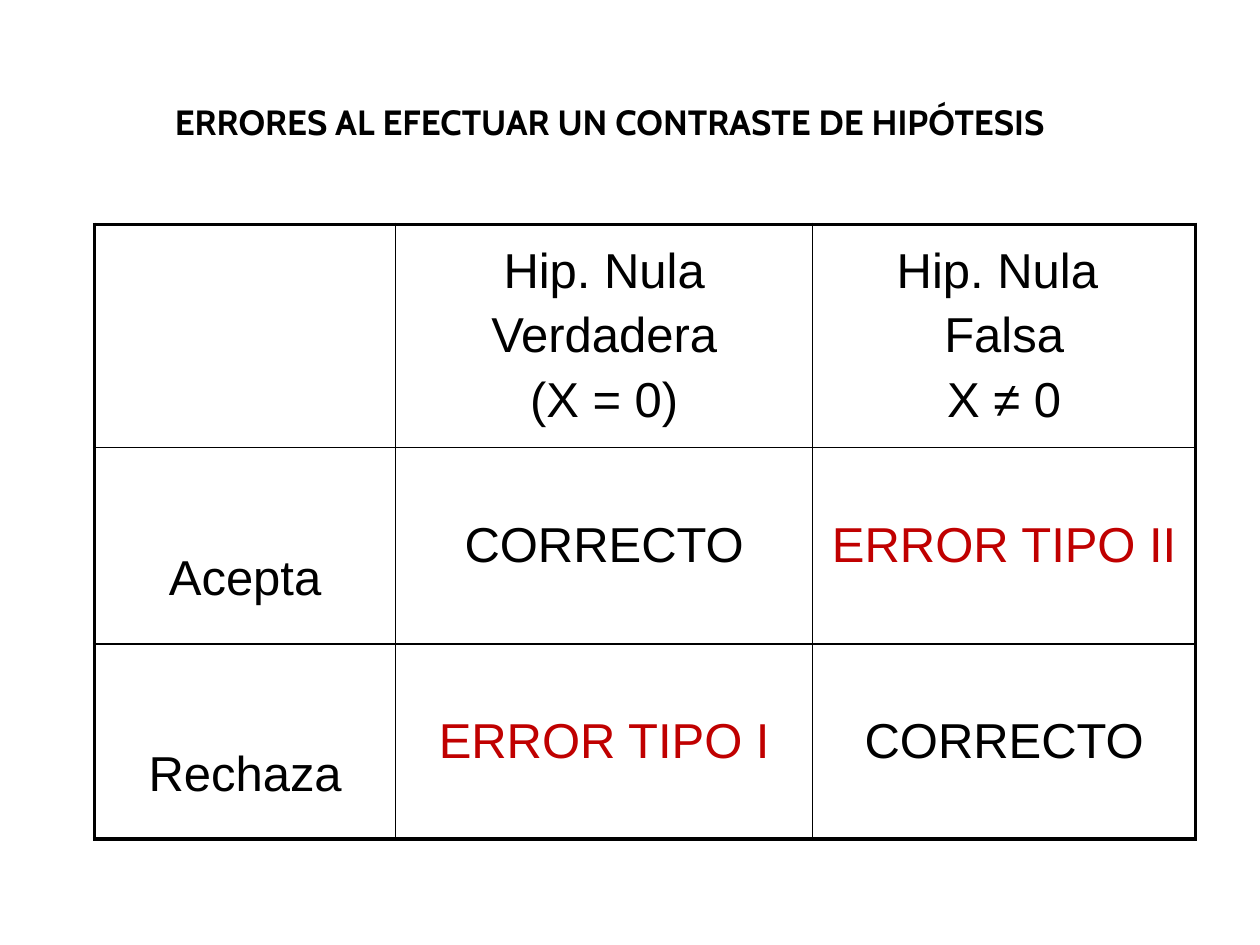
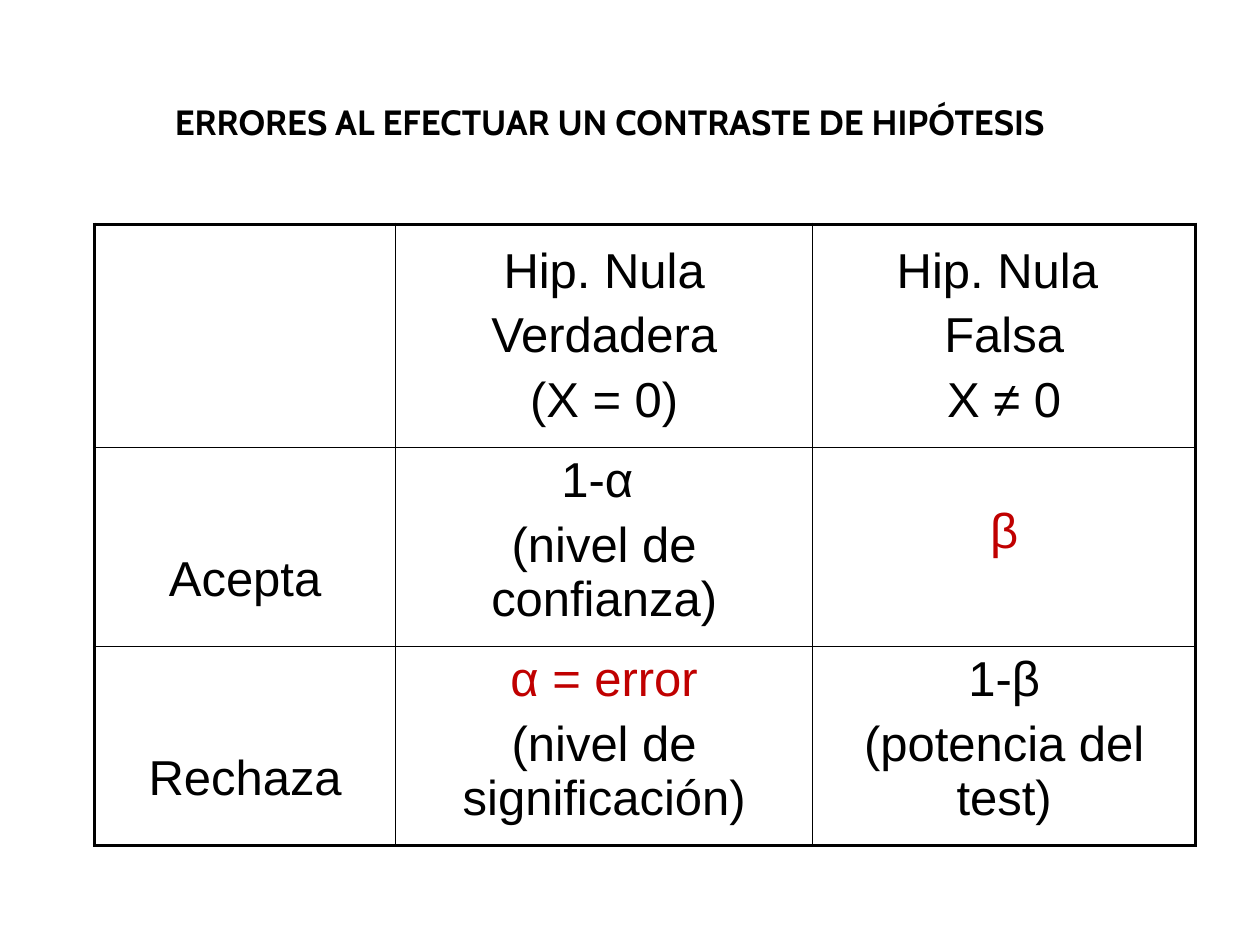
"""Build two slides on the errors made when testing a hypothesis."""
from lxml.etree import SubElement
from pptx import Presentation
from pptx.dml.color import RGBColor
from pptx.enum.text import MSO_ANCHOR, MSO_AUTO_SIZE, PP_ALIGN
from pptx.oxml.ns import qn
from pptx.util import Inches, Pt

BLACK, RED = "000000", "C00000"
THICK, THIN = 2.25, 1
TITLE = "ERRORES AL EFECTUAR UN CONTRASTE DE HIPÓTESIS"
COLUMN_WIDTHS = [2.39, 3.31, 3.04]
HEADINGS = [[], ["Hip. Nula", "Verdadera", "(X = 0)"], ["Hip. Nula ", "Falsa", "X ≠ 0"]]
RED_TEXTS = {"ERROR TIPO I", "ERROR TIPO II", "α = error", "β"}
TOP_MARGINS = {"Acepta": 0.57, "Rechaza": 0.57, "β": 0.45}

slides = [
    {
        "row_heights": [1.77, 1.56, 1.55],
        "anchor": MSO_ANCHOR.MIDDLE,
        "outcomes": [
            [["Acepta"], ["CORRECTO"], ["ERROR TIPO II"]],
            [["Rechaza"], ["ERROR TIPO I"], ["CORRECTO"]],
        ],
    },
    {
        "row_heights": [1.77, 1.58, 1.58],
        "anchor": MSO_ANCHOR.TOP,
        "outcomes": [
            [["Acepta"], ["1-α ", "(nivel de confianza)"], ["β"]],
            [["Rechaza"], ["α = error", "(nivel de significación)"],
             ["1-β", "(potencia del test)"]],
        ],
    },
]


def write(para, text, font="Arial", size=28, color=BLACK, bold=False, before=0):
    """Add centred, formatted text to a paragraph."""
    para.alignment = PP_ALIGN.CENTER
    para.space_before = Pt(before)
    span = para.add_run()
    span.text = text
    span.font.name = font
    span.font.size = Pt(size)
    span.font.bold = bold
    span.font.color.rgb = RGBColor.from_string(color)


def add_border(cell, side, width):
    """Draw one black side of a table cell."""
    properties = cell._tc.get_or_add_tcPr()
    line = SubElement(properties, qn(f"a:ln{side}"), w=str(Pt(width)))
    fill = SubElement(line, qn("a:solidFill"))
    SubElement(fill, qn("a:srgbClr"), val=BLACK)


deck = Presentation()
deck.slide_width, deck.slide_height = Inches(10), Inches(7.5)

for slide in slides:
    page = deck.slides.add_slide(deck.slide_layouts[5])
    title = page.shapes.title
    title.left, title.top = Inches(0.59), Inches(0.75)
    title.width, title.height = Inches(8.5), Inches(0.44)
    title.text_frame.word_wrap = True
    title.text_frame.auto_size = MSO_AUTO_SIZE.SHAPE_TO_FIT_TEXT
    title.text_frame.vertical_anchor = MSO_ANCHOR.TOP
    write(title.text_frame.paragraphs[0], TITLE, font="Cabin", size=20, bold=True)

    rows = [HEADINGS] + slide["outcomes"]
    heights = slide["row_heights"]
    table = page.shapes.add_table(
        len(rows), len(COLUMN_WIDTHS), Inches(0.75), Inches(1.78),
        Inches(sum(COLUMN_WIDTHS)), Inches(sum(heights))).table
    table.first_row = table.horz_banding = False
    for column, width in zip(table.columns, COLUMN_WIDTHS):
        column.width = Inches(width)

    last_row, last_column = len(rows) - 1, len(COLUMN_WIDTHS) - 1
    for row_index, row in enumerate(rows):
        table.rows[row_index].height = Inches(heights[row_index])
        for column_index, lines in enumerate(row):
            cell = table.cell(row_index, column_index)
            is_label = row_index == 0 or column_index == 0
            cell.vertical_anchor = MSO_ANCHOR.MIDDLE if is_label else slide["anchor"]
            for line_index, text in enumerate(lines):
                frame = cell.text_frame
                para = frame.add_paragraph() if line_index else frame.paragraphs[0]
                write(para, text, color=RED if text in RED_TEXTS else BLACK, before=5.6)
                if text in TOP_MARGINS:
                    cell.margin_top = Inches(TOP_MARGINS[text])
            outer_sides = {
                "L": column_index == 0,
                "R": column_index == last_column,
                "T": row_index == 0,
                "B": row_index == last_row,
            }
            for side, is_outer in outer_sides.items():
                add_border(cell, side, THICK if is_outer else THIN)
            cell.fill.background()

deck.save("out.pptx")
